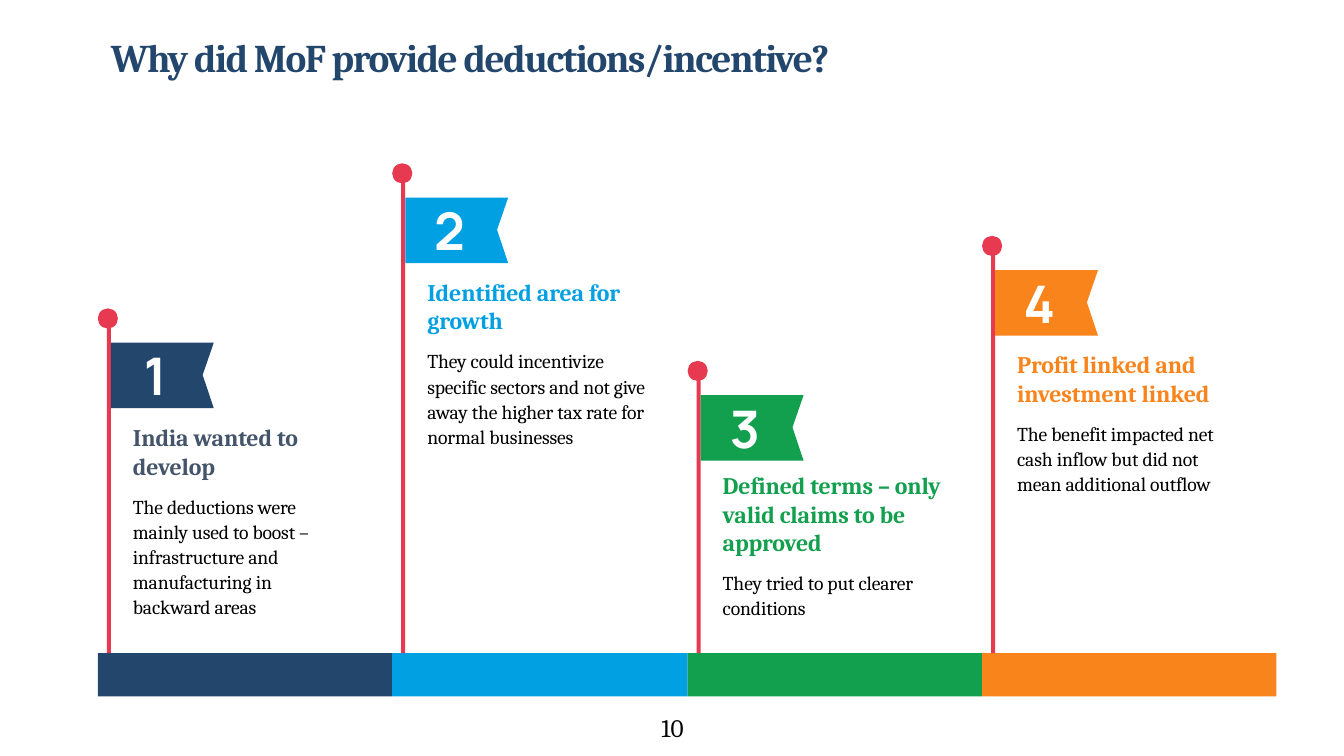
from pptx import Presentation
from pptx import util as u
from pptx.dml.color import RGBColor
from pptx.enum import shapes, text

PX = 9144  # 100 px to the inch
NAVY, RED, BLACK, WHITE = "23466D", "E73A51", "000000", "FFFFFF"
LEFT, STEP, BASE = 97, 292.33, 648

deck = Presentation()
deck.slide_width, deck.slide_height = 1333 * PX, 750 * PX
slide = deck.slides.add_slide(deck.slide_layouts[5])
items = slide.shapes


def paint(shape, color):
    shape.shadow.inherit = False
    shape.fill.solid()
    shape.fill.fore_color.rgb = RGBColor.from_string(color)
    shape.line.fill.background()


def write(words, x, y, w, h, size, color=BLACK, face="Cambria", bold=False,
          align="LEFT", anchor="TOP", gap=0, lead=None, box=None):
    box = box or items.add_textbox(0, 0, 0, 0)
    box.left, box.top, box.width, box.height = [n * PX for n in (x, y, w, h)]
    frame = box.text_frame
    frame.word_wrap = True
    frame.auto_size = text.MSO_AUTO_SIZE.NONE
    frame.vertical_anchor = text.MSO_ANCHOR[anchor]
    para = frame.paragraphs[0]
    para.alignment = text.PP_ALIGN[align]
    if lead:
        para.line_spacing = lead
    run = para.add_run()
    run.text = words
    font = run.font
    font.name, font.size, font.bold = face, u.Pt(size), bold
    font.color.rgb = RGBColor.from_string(color)
    if gap:
        font._element.set("spc", str(gap))
    return para


# Title
head = write("Why did MoF provide deductions/incentive?", 99, 17, 1150, 85, 28,
             NAVY, bold=True, anchor="MIDDLE", gap=-100, lead=0.9,
             box=items.title)
head._p.get_or_add_pPr().set("marL", str(PX))

# Flags: top, bar colour, heading colour, heading y, w and h, heading, body
flags = [
    (306, NAVY, "44546A", 414, 237, 67, "India wanted to develop",
     "The deductions were mainly used to boost – infrastructure and "
     "manufacturing in backward areas"),
    (162, "00A0E3", "00A0E3", 270, 237, 67, "Identified area for growth",
     "They could incentivize specific sectors and not give away the higher "
     "tax rate for normal businesses"),
    (358, "13A04E", "13A04E", 461, 244, 96,
     "Defined terms – only valid claims to be approved",
     "They tried to put clearer conditions"),
    (234, "F9841B", "F9841B", 342, 237, 67,
     "Profit linked and investment linked",
     "The benefit impacted net cash inflow but did not mean additional "
     "outflow"),
]

for i, (top, color, ink, y, wide, high, name, body) in enumerate(flags):
    x = round(LEFT + STEP * i)
    end = round(LEFT + STEP * (i + 1))

    # Base bar, pole and knob
    for kind, box, tint in (
            ("RECTANGLE", (x, BASE, end - x, 43), color),
            ("RECTANGLE", (x + 9, top + 10, 4, BASE - top - 10), RED),
            ("OVAL", (x, top, 20, 20), RED)):
        paint(items.add_shape(shapes.MSO_SHAPE[kind], *[n * PX for n in box]),
              tint)

    # Notched flag with its number
    fx, fy = x + 13, top + 34
    pen = items.build_freeform(fx, fy, scale=PX)
    pen.add_line_segments([(fx + 102, fy), (fx + 91, fy + 32),
                           (fx + 102, fy + 65), (fx, fy + 65)])
    paint(pen.convert_to_shape(), color)
    write(str(i + 1), x + 24, fy - 4, 66, 72, 37, WHITE, "Manrope", True,
          "CENTER", "MIDDLE", -290)

    # Heading and body
    write(name, x + 25, y, wide, high, 17, ink, bold=True, anchor="BOTTOM",
          gap=-10)
    low = y + high + 3
    write(body, x + 25, low, 237, min(135, 620 - low), 14, gap=-10,
          lead=u.Pt(18))

# Page number
write("10", 517, 702, 300, 40, 18, align="CENTER")

deck.save("out.pptx")
